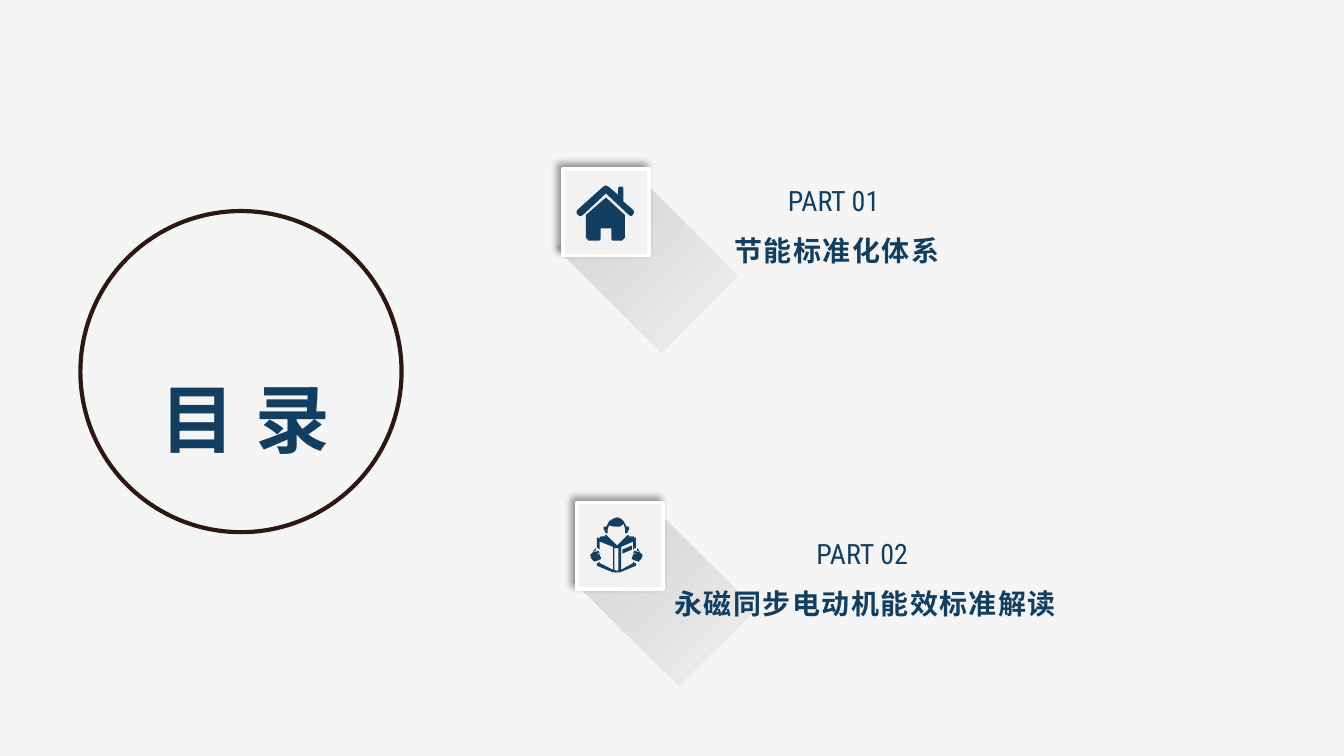
import pptx
import pptx.dml.color
import pptx.enum.shapes
import pptx.enum.text
import pptx.oxml
import pptx.oxml.ns
import pptx.util
from pptx.util import Cm

COLORS = {"page": "F5F5F6", "navy": "123E61", "ring": "2E1612", "tile": "F2F2F2",
          "edge": "FFFFFF", "shade_near": "D9D9D9", "shade_far": "BFBFBF"}
FONT = "Roboto Condensed"
UNIT = Cm(2.54) / 100  # outlines are drawn on a grid of 1/100 inch
TILE_SIZE = 1.63


def mirrored(outline, axis_sum=59):
    return [(axis_sum - x, y) for x, y in outline]


LONG_SHADOW = [(0, 51), (64, 0), (136, 72), (79, 129)]

HOUSE = [
    [[(17, 34), (17, 51), (19, 53), (27, 53), (28, 52), (28, 44), (36, 44), (36, 52),
      (37, 53), (44, 53), (46, 51), (46, 34), (32, 21)]],
    [[(52, 30), (45, 24), (45, 14), (44, 13), (42, 13), (41, 14), (41, 19), (34, 13),
      (32, 12), (30, 13), (11, 30), (10, 32), (11, 34), (13, 35), (15, 34), (32, 18),
      (49, 34), (51, 35), (52, 34), (53, 32)]],
]

HAND = [(16, 36), (17, 37), (14, 39), (17, 38), (17, 39), (15, 40), (17, 39), (18, 41),
        (16, 42), (18, 41), (18, 42), (16, 43), (13, 44), (11, 42), (10, 39), (12, 37)]
THUMB = [(12, 37), (13, 36), (14, 36), (14, 34), (13, 35)]
SPINE = [(28, 34), (28, 50), (30, 51), (31, 50), (31, 34), (30, 34)]
LABEL = [(34, 35), (41, 32), (41, 35), (34, 38)]
BOOK = [(20, 28), (17, 27), (17, 26), (18, 25), (20, 27), (19, 26), (19, 25), (20, 25),
        (22, 26), (21, 25), (21, 24), (22, 24), (30, 32), (38, 24), (39, 25), (38, 26),
        (40, 25), (41, 25), (40, 26), (39, 27), (42, 25), (43, 26), (42, 27), (39, 29),
        (44, 26), (44, 34), (43, 34), (42, 35), (42, 29), (33, 33), (33, 50), (42, 45),
        (42, 44), (43, 45), (44, 45), (44, 47), (32, 52), (27, 52), (15, 47), (15, 45),
        (16, 45), (17, 44), (17, 45), (27, 50), (27, 33), (17, 29), (17, 35), (16, 34),
        (15, 34), (15, 26)]
HEAD = [(30, 11), (33, 12), (35, 14), (37, 18), (39, 18), (39, 20), (38, 21), (38, 22),
        (37, 23), (36, 23), (36, 20), (35, 16), (32, 18), (28, 18), (24, 17), (23, 20),
        (23, 23), (22, 23), (21, 22), (21, 21), (20, 20), (20, 18), (22, 18), (24, 14),
        (27, 12)]
READER = [[SPINE, LABEL, BOOK, HAND, THUMB, mirrored(HAND), mirrored(THUMB), HEAD]]

SECTIONS = [
    {"lines": ["PART 01 ", "节能标准化体系"], "text_box": (13.59, 3.02, 4.45, 2.06),
     "tile": (10.64, 3.2), "shadow": (10.49, 3.38), "icon": HOUSE},
    {"lines": ["PART 02 ", "永磁同步电动机能效标准解读"], "text_box": (12.47, 9.7, 7.77, 2.18),
     "tile": (10.9, 9.5), "shadow": (10.82, 9.68), "icon": READER},
]
TITLE = {"text": "目 录", "text_box": (2.79, 6.07, 3.73, 2.46), "ring": (1.52, 3.99, 6.07, 6.07)}


def color(name):
    return pptx.dml.color.RGBColor.from_string(COLORS[name])


def add_outline(shapes, contours, left, top):
    """Draw closed contours whose grid origin lies at left, top (cm)."""
    builder = shapes.build_freeform(*contours[0][0], scale=UNIT)
    for index, contour in enumerate(contours):
        if index:
            builder.move_to(*contour[0])
        builder.add_line_segments(contour[1:], close=True)
    outline = builder.convert_to_shape(Cm(left), Cm(top))
    outline.shadow.inherit = False
    outline.line.fill.background()
    return outline


def add_long_shadow(shapes, left, top):
    shade = add_outline(shapes, [LONG_SHADOW], left, top)
    shade.fill.gradient()
    shade.fill.gradient_angle = 315
    for stop, name in zip(shade.fill.gradient_stops, ("shade_near", "shade_far")):
        stop.color.rgb = color(name)
    far_color = shade.element.spPr.xpath(".//a:gs/a:srgbClr")[-1]
    far_color.append(pptx.oxml.parse_xml(
        f'<a:alpha {pptx.oxml.ns.nsdecls("a")} val="0"/>'))


def add_tile(shapes, left, top, icon):
    group = shapes.add_group_shape()
    tile = group.shapes.add_shape(pptx.enum.shapes.MSO_SHAPE.RECTANGLE, Cm(left), Cm(top),
                                  Cm(TILE_SIZE), Cm(TILE_SIZE))
    tile.fill.solid()
    tile.fill.fore_color.rgb = color("tile")
    tile.line.color.rgb = color("edge")
    tile.line.width = pptx.util.Pt(2)
    tile.shadow.inherit = False
    effects = tile.element.spPr.find(pptx.oxml.ns.qn("a:effectLst"))
    effects.append(pptx.oxml.parse_xml(
        f'<a:outerShdw {pptx.oxml.ns.nsdecls("a")} blurRad="50800" dist="38100" '
        'dir="13500000" rotWithShape="0"><a:srgbClr val="000000">'
        '<a:alpha val="40000"/></a:srgbClr></a:outerShdw>'))
    for contours in icon:
        part = add_outline(group.shapes, contours, left, top)
        part.fill.solid()
        part.fill.fore_color.rgb = color("navy")


def add_text(shapes, position, lines, size, align):
    """Add a text box whose last line is bold and slightly spaced out."""
    box = shapes.add_textbox(*map(Cm, position))
    frame = box.text_frame
    frame.text = "\n".join(lines)
    frame.word_wrap = False
    frame.auto_size = pptx.enum.text.MSO_AUTO_SIZE.SHAPE_TO_FIT_TEXT
    for para in frame.paragraphs:
        para.alignment = align
        para.line_spacing = 1.5
        for span in para.runs:
            span.font.name = FONT
            span.font.size = pptx.util.Pt(size)
            span.font.color.rgb = color("navy")
    heading = frame.paragraphs[-1].runs[0].font
    heading.bold = True
    frame.paragraphs[-1].runs[0]._r.get_or_add_rPr().set("spc", "80")


def main():
    deck = pptx.Presentation()
    deck.slide_width, deck.slide_height = Cm(25.4), Cm(14.29)
    page = deck.slides.add_slide(deck.slide_layouts[6])
    page.background.fill.solid()
    page.background.fill.fore_color.rgb = color("page")

    align = pptx.enum.text.PP_ALIGN
    for section in SECTIONS:
        add_long_shadow(page.shapes, *section["shadow"])
        add_tile(page.shapes, *section["tile"], section["icon"])
        add_text(page.shapes, section["text_box"], section["lines"], 15, align.CENTER)

    ring = page.shapes.add_shape(pptx.enum.shapes.MSO_SHAPE.OVAL, *map(Cm, TITLE["ring"]))
    ring.shadow.inherit = False
    ring.fill.background()
    ring.line.color.rgb = color("ring")
    ring.line.width = pptx.util.Pt(2.25)
    add_text(page.shapes, TITLE["text_box"], [TITLE["text"]], 40, align.LEFT)
    deck.save("out.pptx")


if __name__ == "__main__":
    main()
